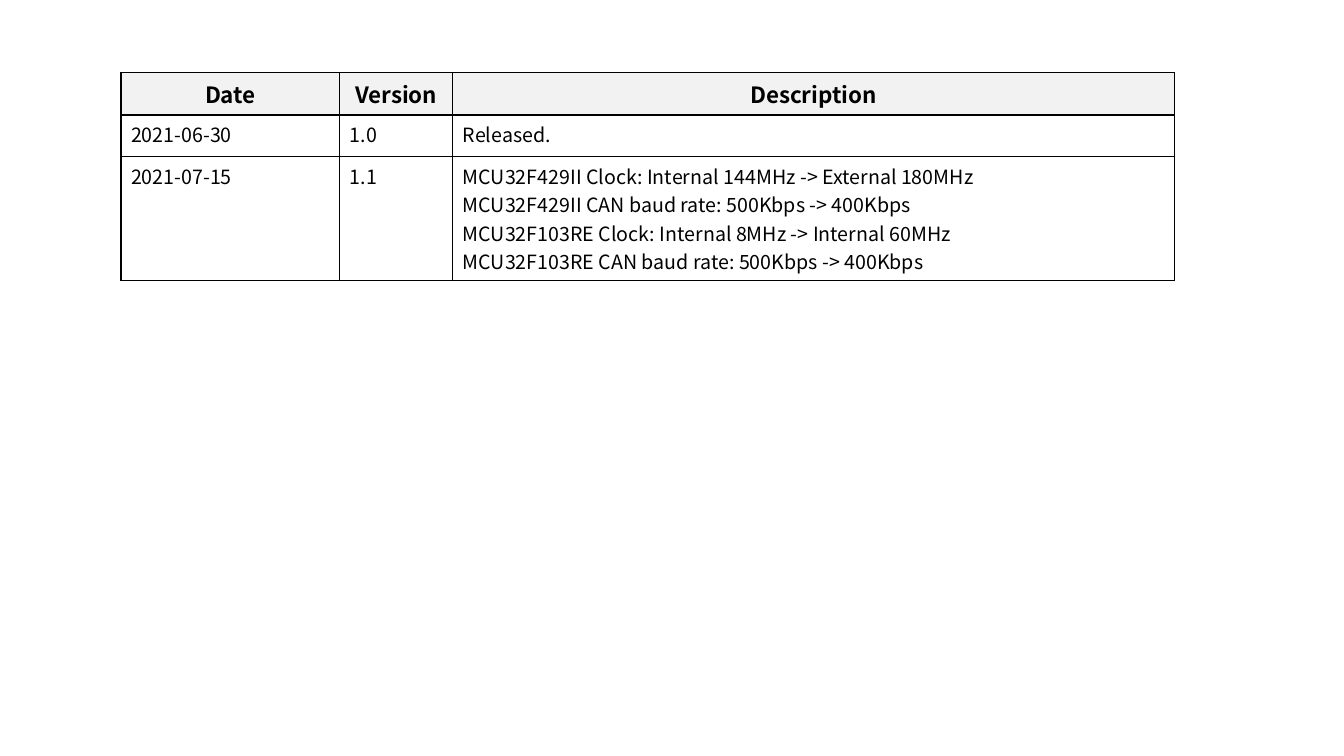
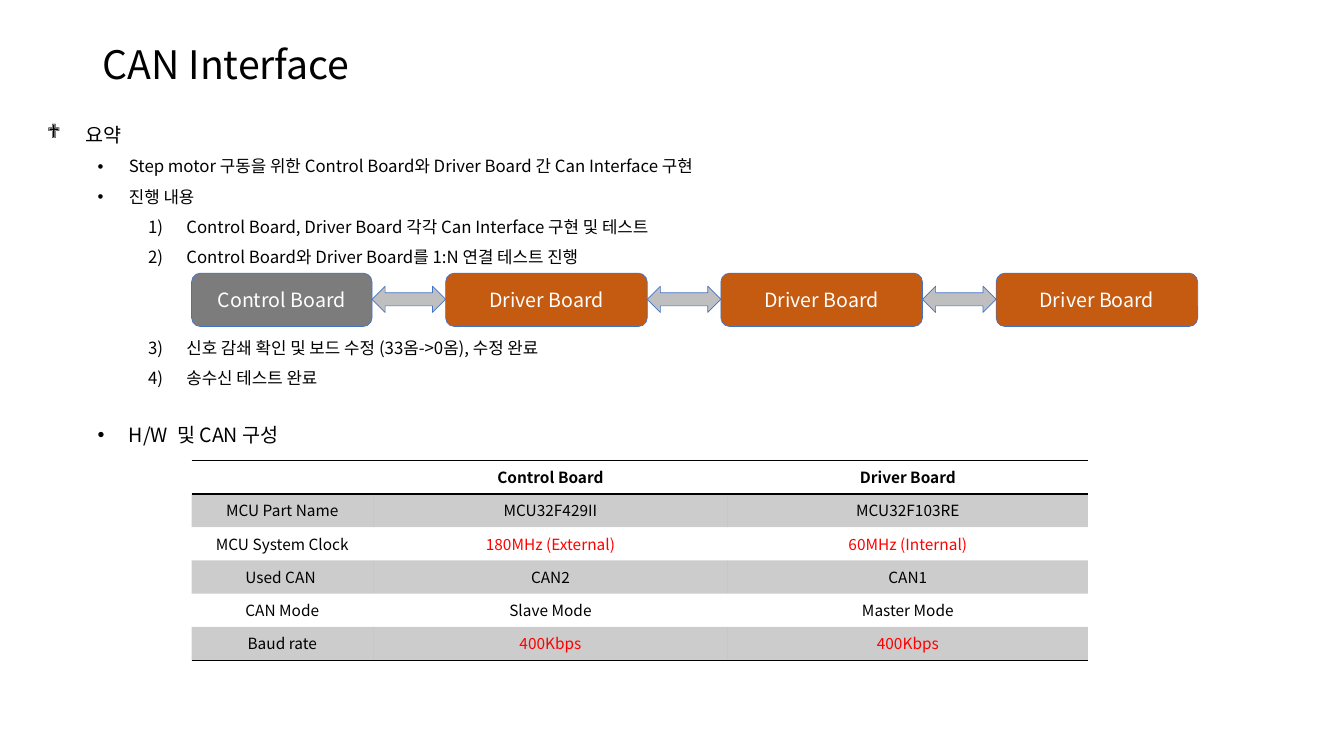
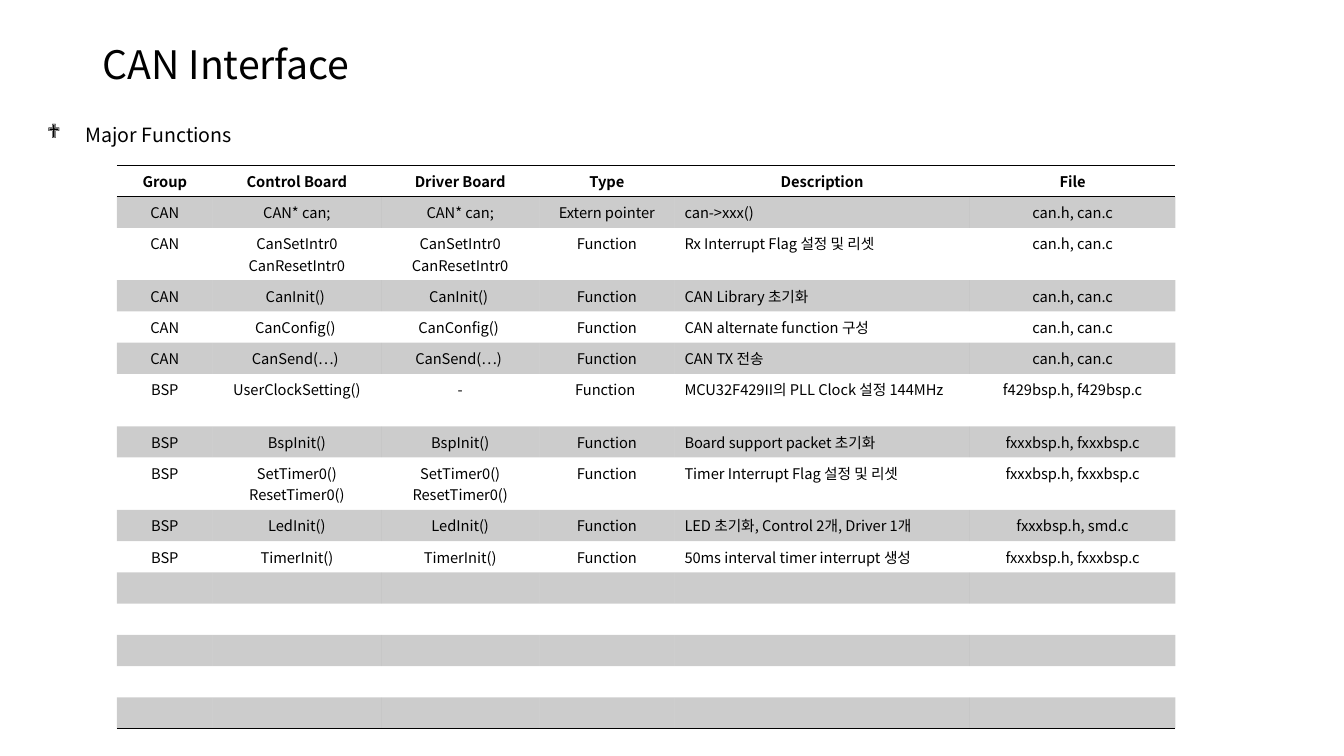
from dataclasses import dataclass

from lxml import etree
from pptx import Presentation
from pptx import util as u
from pptx.dml import color
from pptx.enum import shapes, text
from pptx.oxml import ns


@dataclass(frozen=True)
class Theme:
    font: str = "Noto Sans CJK KR"
    ink: str = "000000"
    white: str = "FFFFFF"
    accent: str = "FF0000"
    header_fill: str = "F2F2F2"
    control: str = "7C7C7C"
    driver: str = "C55A11"
    arrow: str = "BFBFBF"
    outline: str = "4472C4"
    band_alpha: int = 20
    title: float = 28
    heading: float = 14
    body: float = 12
    history_header: float = 16
    history: float = 14
    setup: float = 11
    functions: float = 10.5


THEME = Theme()
NO_STYLE = "{2D5ABB26-0587-4C30-8999-92F81FD0307C}"
CENTER, LEFT = text.PP_ALIGN.CENTER, text.PP_ALIGN.LEFT


# ---------- Shared helpers ----------

def rgb(value):
    return color.RGBColor.from_string(value)


def add_child(parent, tag, **attributes):
    return etree.SubElement(parent, ns.qn(tag), attributes)


def write(para, words, size, ink=THEME.ink, bold=False):
    span = para.add_run()
    span.text = words
    span.font.name = THEME.font
    span.font.size = u.Pt(size)
    span.font.bold = bold
    span.font.color.rgb = rgb(ink)
    # East Asian text uses the same family
    add_child(span.font._element, "a:ea", typeface=THEME.font)


def add_text_box(page, left, top, width, height):
    box = page.shapes.add_textbox(*map(u.Inches, (left, top, width, height)))
    box.text_frame.word_wrap = True
    return box.text_frame


def add_title(page, words):
    frame = add_text_box(page, 0.92, 0.4, 11.5, 0.53)
    frame.vertical_anchor = text.MSO_ANCHOR.MIDDLE
    para = frame.paragraphs[0]
    para.line_spacing = 0.9
    write(para, words, THEME.title)


# ---------- Outline text ----------

@dataclass(frozen=True)
class Bullet:
    level: int
    margin: float
    hanging: float
    font: str
    tag: str
    attributes: tuple


SECTION = Bullet(0, 0.38, 0.38, "Wingdings", "a:buChar", (("char", "❖"),))
POINT = Bullet(1, 0.81, 0.31, "Arial", "a:buChar", (("char", "•"),))
STEP = Bullet(2, 1.38, 0.38, THEME.font, "a:buAutoNum", (("type", "arabicParenR"),))


def add_outline(page, height, items):
    """Each item: bullet, words, size, line spacing, space before."""
    frame = add_text_box(page, 0.37, 1.05, 9.52, height)
    for index, (bullet, words, size, spacing, before) in enumerate(items):
        para = frame.add_paragraph() if index else frame.paragraphs[0]
        para.level = bullet.level
        para.line_spacing = spacing
        para.space_before = u.Pt(before)
        properties = para._p.get_or_add_pPr()
        properties.set("marL", str(u.Inches(bullet.margin)))
        properties.set("indent", str(-u.Inches(bullet.hanging)))
        add_child(properties, "a:buFont", typeface=bullet.font)
        add_child(properties, bullet.tag, **dict(bullet.attributes))
        write(para, words, size)


# ---------- Tables ----------

def add_border(cell, side):
    line = add_child(cell._tc.get_or_add_tcPr(), "a:ln" + side, w=str(u.Pt(1)))
    fill = add_child(line, "a:solidFill")
    add_child(fill, "a:srgbClr", val=THEME.ink)


def fill_cell(cell, fill, alpha=None):
    if fill is None:
        cell.fill.background()
        return
    cell.fill.solid()
    cell.fill.fore_color.rgb = rgb(fill)
    if alpha:
        solid = cell._tc.tcPr.find(ns.qn("a:solidFill"))
        add_child(solid[0], "a:alpha", val=str(alpha * 1000))


def fill_text(cell, words, size, align, ink=THEME.ink, bold=False):
    frame = cell.text_frame
    for index, line in enumerate(words.split("\n")):
        para = frame.add_paragraph() if index else frame.paragraphs[0]
        para.alignment = align
        if line:
            write(para, line, size, ink, bold)
        else:
            add_child(para._p, "a:endParaRPr", sz=str(int(size * 100)))


def add_plain_table(page, left, top, widths, heights):
    frame = page.shapes.add_table(
        len(heights), len(widths), u.Inches(left), u.Inches(top),
        u.Inches(sum(widths)), u.Inches(sum(heights)))
    table = frame.table
    table.first_row = table.horz_banding = False
    table._tbl.tblPr.find(ns.qn("a:tableStyleId")).text = NO_STYLE
    for column, width in zip(table.columns, widths):
        column.width = u.Inches(width)
    for row, height in zip(table.rows, heights):
        row.height = u.Inches(height)
    return table


def add_grid_table(page, left, top, widths, heights, rows):
    table = add_plain_table(page, left, top, widths, heights)
    for r, row in enumerate(rows):
        header = r == 0
        for c, words in enumerate(row):
            cell = table.cell(r, c)
            for side in "LRTB":
                add_border(cell, side)
            fill_cell(cell, THEME.header_fill if header else None)
            fill_text(cell, words,
                      THEME.history_header if header else THEME.history,
                      CENTER if header else LEFT, bold=header)


def add_banded_table(page, left, top, widths, heights, rows, size,
                     left_columns=(), accents=()):
    table = add_plain_table(page, left, top, widths, heights)
    for r, row in enumerate(rows):
        header = r == 0
        sides = "TB" if header else "B" if r == len(rows) - 1 else ""
        for c, words in enumerate(row):
            cell = table.cell(r, c)
            for side in sides:
                add_border(cell, side)
            fill_cell(cell, THEME.ink if r % 2 else None, THEME.band_alpha)
            fill_text(cell, words, size,
                      LEFT if c in left_columns and not header else CENTER,
                      THEME.accent if (r, c) in accents else THEME.ink, header)


# ---------- Board chain ----------

def add_block(page, kind, left, top, width, height, fill):
    block = page.shapes.add_shape(kind, *map(u.Inches, (left, top, width, height)))
    block.shadow.inherit = False
    block.fill.solid()
    block.fill.fore_color.rgb = rgb(fill)
    block.line.color.rgb = rgb(THEME.outline)
    block.line.width = u.Pt(0.5)
    return block


def add_board_chain(page, left, top, height, gap, boards):
    """Boards in a row, joined by double arrows that fill the gaps."""
    for index, (words, width, fill) in enumerate(boards):
        if index:
            add_block(page, shapes.MSO_SHAPE.LEFT_RIGHT_ARROW,
                      left, top + 0.13, gap, 0.26, THEME.arrow)
            left += gap
        board = add_block(page, shapes.MSO_SHAPE.ROUNDED_RECTANGLE,
                          left, top, width, height, fill)
        board.text_frame.vertical_anchor = text.MSO_ANCHOR.MIDDLE
        para = board.text_frame.paragraphs[0]
        para.alignment = CENTER
        write(para, words, THEME.heading, THEME.white)
        left += width


# ---------- Slides ----------

def build_history(page):
    changes = "\n".join((
        "MCU32F429II Clock: Internal 144MHz -> External 180MHz",
        "MCU32F429II CAN baud rate: 500Kbps -> 400Kbps",
        "MCU32F103RE Clock: Internal 8MHz -> Internal 60MHz",
        "MCU32F103RE CAN baud rate: 500Kbps -> 400Kbps",
    ))
    add_grid_table(page, 1.2, 0.72, (2.17, 1.12, 7.16), (0.41, 0.41, 1.23), (
        ("Date", "Version", "Description"),
        ("2021-06-30", "1.0", "Released."),
        ("2021-07-15", "1.1", changes),
    ))


def build_summary(page):
    add_title(page, "CAN Interface")
    driver = ("Driver Board", 2, THEME.driver)
    add_board_chain(page, 1.9, 2.71, 0.53, 0.73,
                    [("Control Board", 1.79, THEME.control)] + [driver] * 3)
    # The third step leaves room for the board chain
    add_outline(page, 5.19, (
        (SECTION, "요약", THEME.heading, 1.5, 0),
        (POINT, "Step motor 구동을 위한 Control Board와 Driver Board 간 "
                "Can Interface 구현", THEME.body, 1.5, 0),
        (POINT, "진행 내용", THEME.body, 1.5, 0),
        (STEP, "Control Board, Driver Board 각각 Can Interface 구현 및 테스트",
         THEME.body, 1.5, 0),
        (STEP, "Control Board와 Driver Board를 1:N 연결 테스트 진행",
         THEME.body, 1.5, 0),
        (STEP, "신호 감쇄 확인 및 보드 수정 (33옴->0옴), 수정 완료",
         THEME.body, 1.5, 43),
        (STEP, "송수신 테스트 완료", THEME.body, 1.5, 0),
        (POINT, "H/W  및 CAN 구성", THEME.heading, 2.5, 0),
    ))
    add_banded_table(page, 1.9, 4.57, (1.8, 3.52, 3.57), [0.33] * 6, (
        ("", "Control Board", "Driver Board"),
        ("MCU Part Name", "MCU32F429II", "MCU32F103RE"),
        ("MCU System Clock", "180MHz (External)", "60MHz (Internal)"),
        ("Used CAN ", "CAN2", "CAN1"),
        ("CAN Mode", "Slave Mode", "Master Mode"),
        ("Baud rate", "400Kbps", "400Kbps"),
    ), THEME.setup, accents={(2, 1), (2, 2), (5, 1), (5, 2)})


def build_functions(page):
    add_title(page, "CAN Interface")
    can_files, bsp_files = "can.h, can.c", "fxxxbsp.h, fxxxbsp.c"
    # Group, call on control board, call on driver board, type, description, file
    calls = [
        ("CAN", "CAN* can;", "CAN* can;", "Extern pointer", "can->xxx()", can_files)
    ] + [
        (group, call, call, "Function", description, files)
        for group, call, description, files in (
            ("CAN", "CanSetIntr0\nCanResetIntr0",
             "Rx Interrupt Flag 설정 및 리셋", can_files),
            ("CAN", "CanInit() ", "CAN Library 초기화", can_files),
            ("CAN", "CanConfig() ", "CAN alternate function 구성", can_files),
            ("CAN", "CanSend(…) ", "CAN TX 전송", can_files),
            ("BSP", "BspInit()", "Board support packet 초기화", bsp_files),
            ("BSP", "SetTimer0()\nResetTimer0()",
             "Timer Interrupt Flag 설정 및 리셋", bsp_files),
            ("BSP", "LedInit()", "LED 초기화, Control 2개, Driver 1개",
             "fxxxbsp.h, smd.c"),
            ("BSP", "TimerInit()", "50ms interval timer interrupt 생성", bsp_files),
        )
    ]
    # The clock call exists on the control board only
    calls.insert(5, ("BSP", "UserClockSetting()", "-", "Function ",
                     "MCU32F429II의 PLL Clock 설정 144MHz",
                     "f429bsp.h, f429bsp.c"))
    header = ("Group", "Control Board", "Driver Board", "Type", "Description", "File")
    rows = [header] + calls + [("",) * len(header)] * 5
    # Rows that hold two lines are taller
    two_line_rows = {2, 6, 8}
    heights = [0.52 if r in two_line_rows else 0.31 for r in range(len(rows))]
    add_banded_table(page, 1.16, 1.64, (0.95, 1.67, 1.57, 1.34, 2.93, 2.04),
                     heights, rows, THEME.functions, left_columns={4})
    add_outline(page, 2.18, (
        (SECTION, "Major Functions", THEME.heading, 1.5, 0),
    ))


def main():
    deck = Presentation()
    deck.slide_width, deck.slide_height = u.Inches(13.33), u.Inches(7.5)
    for build in (build_history, build_summary, build_functions):
        build(deck.slides.add_slide(deck.slide_layouts[6]))
    deck.save("out.pptx")


if __name__ == "__main__":
    main()
